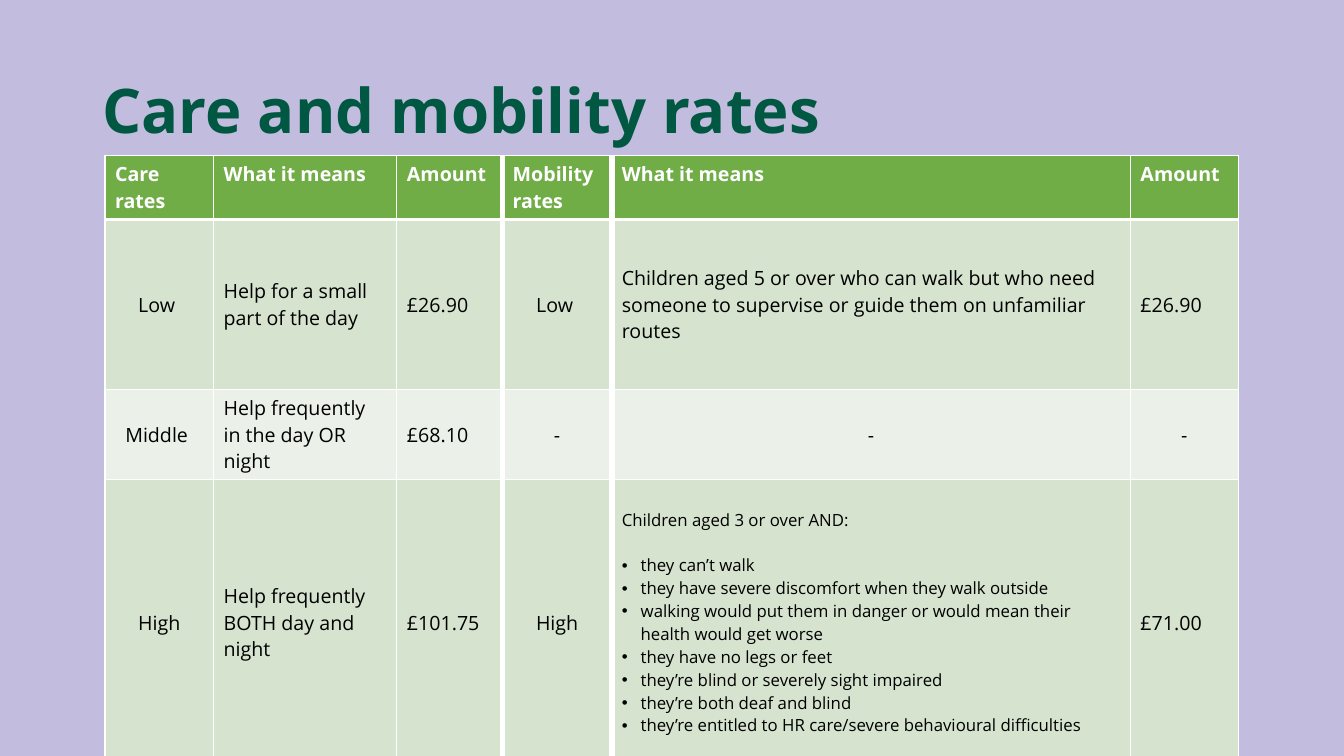
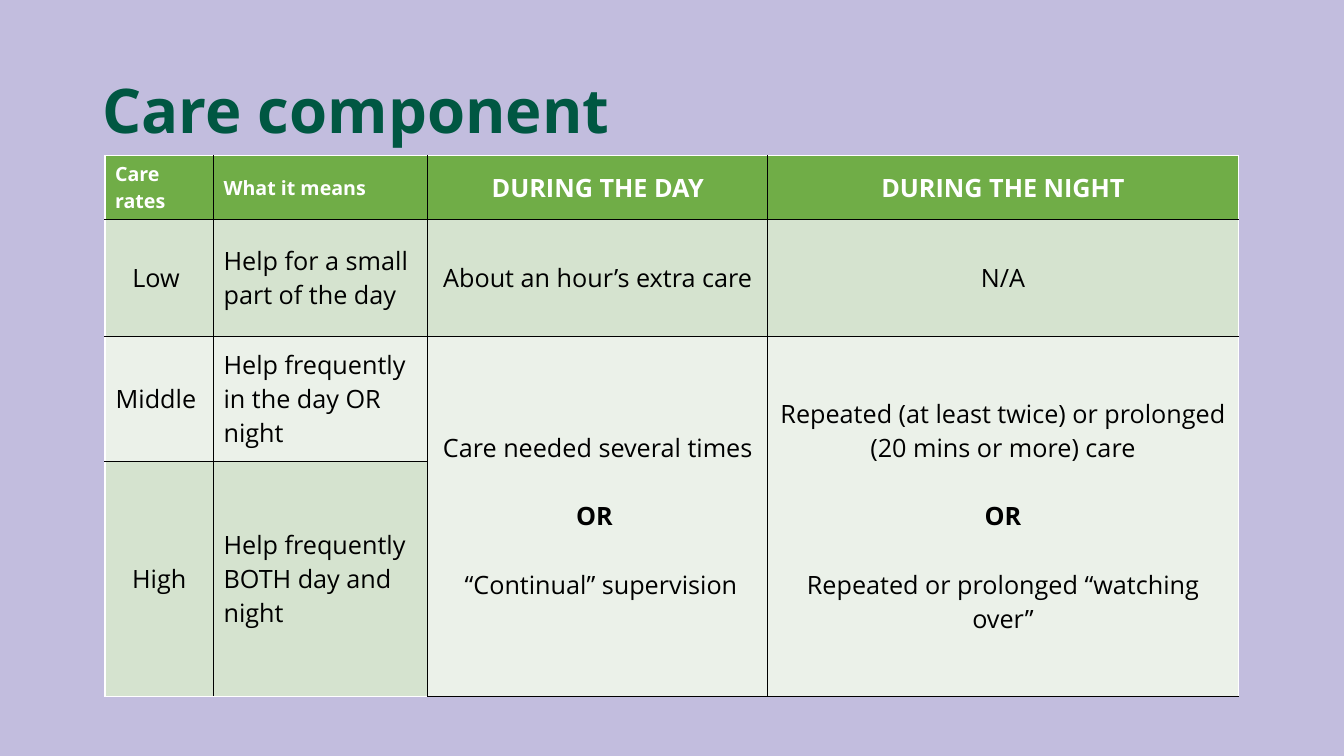
from lxml import etree
from pptx import Presentation
from pptx.dml.color import RGBColor
from pptx.enum.text import MSO_ANCHOR, PP_ALIGN
from pptx.oxml.ns import qn
from pptx.util import Pt

LILAC = RGBColor(0xC2, 0xBD, 0xDE)
DARK_GREEN = RGBColor(0x00, 0x57, 0x42)
HEADER_GREEN = RGBColor(0x70, 0xAD, 0x47)
BANDS = RGBColor(0xD5, 0xE3, 0xCF), RGBColor(0xEB, 0xF1, 0xE9)
WHITE = RGBColor(0xFF, 0xFF, 0xFF)
BLACK = RGBColor(0x00, 0x00, 0x00)
FONT = "Open Sans"
TABLE_LEFT, TABLE_TOP = 75, 111

LOW = "Help for a small part of the day"
MIDDLE = "Help frequently in the day OR night"
HIGH = "Help frequently BOTH day and night"

# A tuple holds alternatives set apart; a dict holds an introduction and its points.
HIGH_MOBILITY = {
    "intro": "Children aged 3 or over AND:",
    "points": [
        "they can’t walk",
        "they have severe discomfort when they walk outside",
        "walking would put them in danger or would mean their health would get worse",
        "they have no legs or feet",
        "they’re blind or severely sight impaired",
        "they’re both deaf and blind",
        "they’re entitled to HR care/severe behavioural difficulties",
    ],
}
DAY_CARE = ("Care needed several times", "OR ", " “Continual” supervision")
NIGHT_CARE = (
    "Repeated (at least twice) or prolonged (20 mins or more) care",
    "OR",
    "Repeated or prolonged “watching over”",
)

SLIDES = [
    {
        "title": "Care and mobility rates",
        "rows": [
            ["Care rates", "What it means", "Amount", "Mobility rates", "What it means", "Amount"],
            ["Low ", LOW, "£26.90", "Low ",
             "Children aged 5 or over who can walk but who need someone to supervise "
             "or guide them on unfamiliar routes", "£26.90"],
            ["Middle ", MIDDLE, "£68.10", "-", "-", "-"],
            ["High", HIGH, "£101.75", "High", HIGH_MOBILITY, "£71.00"],
        ],
        "widths": [77.5, 131, 75.5, 78, 370.5, 77],
        "heights": [45.7, 121.5, 64.3, 204],
        "size": 14,
        "centred": {0, 3},
        "centred_headers": set(),
        "header_anchor": MSO_ANCHOR.TOP,
        "inner_line": WHITE,
        "header_rule": 3,
        "heavy_rules": {3, 4},
        "merged": [],
    },
    {
        "title": "Care component",
        "rows": [
            ["Care rates", "What it means", "DURING THE DAY", "DURING THE NIGHT"],
            ["Low ", LOW, "About an hour’s extra care", "N/A"],
            ["Middle ", MIDDLE, DAY_CARE, NIGHT_CARE],
            ["High", HIGH, None, None],
        ],
        "widths": [77.5, 153, 243, 336],
        "heights": [45.7, 83.5, 89.3, 167.8],
        "size": 18,
        "centred": {0, 2, 3},
        "centred_headers": {2, 3},
        "header_anchor": MSO_ANCHOR.MIDDLE,
        "inner_line": BLACK,
        "header_rule": 1,
        "heavy_rules": set(),
        "merged": [((2, 2), (3, 2)), ((2, 3), (3, 3))],
    },
]


def style(para, size, colour, bold=False):
    for span in para.runs:
        font = span.font
        font.name, font.size, font.bold = FONT, Pt(size), bold
        font.color.rgb = colour


def add_bullet(para):
    props = para._p.get_or_add_pPr()
    props.set("marL", str(Pt(13.5)))
    props.set("indent", str(-Pt(13.5)))
    etree.SubElement(props, qn("a:buFont"), typeface="Arial")
    etree.SubElement(props, qn("a:buChar"), char="•")


def draw_border(cell, side, colour, width):
    line = etree.SubElement(cell._tc.get_or_add_tcPr(), qn("a:ln" + side), w=str(Pt(width)))
    fill = etree.SubElement(line, qn("a:solidFill"))
    etree.SubElement(fill, qn("a:srgbClr"), val=str(colour))


def draw_borders(cell, row, col, content):
    """White outer frame, inner rules in the table's own colour."""
    def colour(index, count):
        return WHITE if index in (0, count) else content["inner_line"]

    for side, index in (("L", col), ("R", col + 1)):
        width = 4.5 if index in content["heavy_rules"] else 1
        draw_border(cell, side, colour(index, len(content["widths"])), width)
    for side, index in (("T", row), ("B", row + 1)):
        width = content["header_rule"] if index == 1 else 1
        draw_border(cell, side, colour(index, len(content["heights"])), width)


def write_cell(cell, value, row, col, content):
    frame = cell.text_frame
    if isinstance(value, dict):
        lines, size, gap = [value["intro"], *value["points"]], 12, 16.3
    elif isinstance(value, tuple):
        lines, size, gap = value, content["size"], 24.5
    else:
        lines, size, gap = [value], content["size"], 0
    header = row == 0
    centred = col in content["centred_headers" if header else "centred"] or value == "-"
    if header:
        size = 18 if centred else 14
    for number, line in enumerate(lines):
        para = frame.add_paragraph() if number else frame.paragraphs[0]
        para.text = line
        para.alignment = PP_ALIGN.CENTER if centred else PP_ALIGN.LEFT
        if number and (number == 1 or isinstance(value, tuple)):
            para.space_before = Pt(gap)
        if number and isinstance(value, dict):
            add_bullet(para)
        style(para, size, WHITE if header else BLACK, header or line.strip() == "OR")
    cell.vertical_anchor = content["header_anchor"] if header else MSO_ANCHOR.MIDDLE


def add_rates_table(page, content):
    widths, heights = content["widths"], content["heights"]
    table = page.shapes.add_table(
        len(heights), len(widths), Pt(TABLE_LEFT), Pt(TABLE_TOP),
        Pt(sum(widths)), Pt(sum(heights))).table
    for column, width in zip(table.columns, widths):
        column.width = Pt(width)
    for table_row, height in zip(table.rows, heights):
        table_row.height = Pt(height)
    for first, last in content["merged"]:
        table.cell(*first).merge(table.cell(*last))
    for row, values in enumerate(content["rows"]):
        for col, value in enumerate(values):
            cell = table.cell(row, col)
            draw_borders(cell, row, col, content)
            cell.fill.solid()
            cell.fill.fore_color.rgb = BANDS[(row - 1) % 2] if row else HEADER_GREEN
            if value is not None:
                write_cell(cell, value, row, col, content)


def prepare_layout(deck):
    """Set the background and the title position shared by all slides."""
    fill = deck.slide_master.background.fill
    fill.solid()
    fill.fore_color.rgb = LILAC
    layout = deck.slide_layouts[5]
    title = layout.placeholders[0]
    title.left, title.top, title.width, title.height = Pt(66), Pt(28.8), Pt(828), Pt(104.4)
    return layout


def add_title(page, words):
    frame = page.shapes.title.text_frame
    frame.text = words
    frame.vertical_anchor = MSO_ANCHOR.MIDDLE
    para = frame.paragraphs[0]
    para.alignment = PP_ALIGN.LEFT
    para.line_spacing = 0.9
    style(para, 44, DARK_GREEN, bold=True)


def main():
    deck = Presentation()
    deck.slide_width, deck.slide_height = Pt(960), Pt(540)
    layout = prepare_layout(deck)
    for content in SLIDES:
        page = deck.slides.add_slide(layout)
        add_title(page, content["title"])
        add_rates_table(page, content)
    deck.save("out.pptx")


if __name__ == "__main__":
    main()
